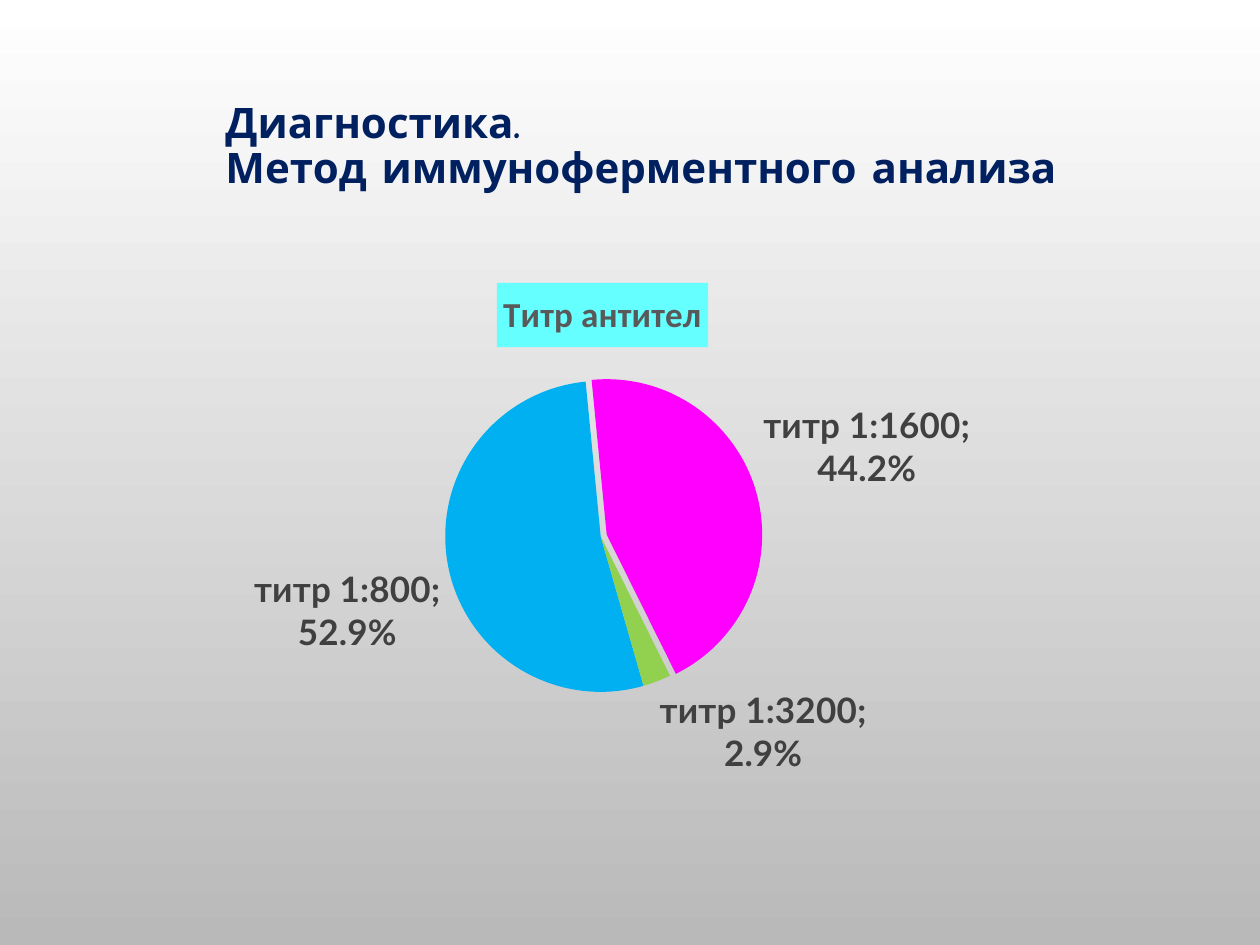
from lxml.etree import SubElement
from pptx import Presentation
from pptx.chart.data import CategoryChartData
from pptx.dml.color import RGBColor
from pptx.enum.chart import XL_CHART_TYPE as ChartType, XL_LABEL_POSITION as LabelPosition
from pptx.enum.text import MSO_ANCHOR as Anchor, PP_ALIGN as Align
from pptx.oxml import parse_xml
from pptx.oxml.ns import nsdecls, qn
from pptx.util import Cm, Pt

COLORS = {
    "top": "FFFFFF", "bottom": "B9B9B9", "heading": "002060",
    "chart_title": "595959", "chart_title_fill": "66FFFF", "label": "404040",
    "1:800": "00B0F0", "1:1600": "FF00FF", "1:3200": "92D050",
}
TITERS = {"1:800": 0.529, "1:1600": 0.442, "1:3200": 0.029}


def color(name):
    return RGBColor.from_string(COLORS[name])


def set_layout(parent, index, **values):
    """Place a chart part by fractions of the chart area."""
    for old in parent.findall(qn("c:layout")):
        parent.remove(old)
    layout = parse_xml(f"<c:layout {nsdecls('c')}><c:manualLayout/></c:layout>")
    for tag, value in values.items():
        SubElement(layout[0], qn(f"c:{tag}")).set("val", str(value))
    parent.insert(index, layout)


class SlideBuilder:
    heading_font = "Comic Neue"
    chart_font = "Calibri"
    label_font = "Lato"

    def __init__(self, presentation):
        self.slide = presentation.slides.add_slide(presentation.slide_layouts[5])

    def style(self, font, name, size, color_name):
        font.name, font.size, font.bold = name, Pt(size), True
        font.color.rgb = color(color_name)

    def background(self):
        fill = self.slide.background.fill
        fill.gradient()
        fill.gradient_angle = 270
        for stop, name, position in zip(fill.gradient_stops, ("top", "bottom"), (0, 1)):
            stop.color.rgb = color(name)
            stop.position = position

    def title(self, lines, left, top, width, height):
        shape = self.slide.shapes.title
        shape.left, shape.top, shape.width, shape.height = map(Cm, (left, top, width, height))
        frame = shape.text_frame
        frame.text = "\n".join(lines)
        frame.word_wrap = True
        frame.vertical_anchor = Anchor.TOP
        for paragraph in frame.paragraphs:
            paragraph.alignment = Align.LEFT
            paragraph.line_spacing = 0.9
            self.style(paragraph.font, self.heading_font, 24, "heading")

    def pie(self, heading, titers, exploded, left, top, width, height):
        data = CategoryChartData(number_format="0.0%")
        data.categories = [f"титр {titer}" for titer in titers]
        data.add_series(heading, titers.values())
        chart = self.slide.shapes.add_chart(
            ChartType.PIE, *map(Cm, (left, top, width, height)), data).chart
        chart.has_legend = False
        chart.font.name, chart.font.size = self.chart_font, Pt(10)

        # Chart title on a coloured box
        chart_title = chart.chart_title
        chart_title.text_frame.text = heading
        self.style(chart_title.text_frame.paragraphs[0].font,
                   self.chart_font, 20, "chart_title")
        chart_title.format.fill.solid()
        chart_title.format.fill.fore_color.rgb = color("chart_title_fill")
        title_element = chart.element.find(".//" + qn("c:title"))
        set_layout(title_element, 1, xMode="edge", yMode="edge", x=0.43, y=0.04)

        # Plot area and rotation
        plot_area = chart.element.find(".//" + qn("c:plotArea"))
        set_layout(plot_area, 0, layoutTarget="inner", xMode="edge", yMode="edge",
                   x=0.3, y=0.22, w=0.44, h=0.57)
        pie_element = plot_area.find(qn("c:pieChart"))
        for old in pie_element.findall(qn("c:firstSliceAng")):
            pie_element.remove(old)
        SubElement(pie_element, qn("c:firstSliceAng")).set("val", "164")

        # Slices
        plot = chart.plots[0]
        plot.vary_by_categories = True
        series = plot.series[0]
        for index, titer in enumerate(titers):
            fill = series.points[index].format.fill
            fill.solid()
            fill.fore_color.rgb = color(titer)
            if titer == exploded:
                explosion = parse_xml(f'<c:explosion {nsdecls("c")} val="4"/>')
                point = series._element.findall(qn("c:dPt"))[index]
                point.find(qn("c:spPr")).addprevious(explosion)

        # Labels
        labels = series.data_labels
        labels.show_category_name = labels.show_value = True
        labels.show_percentage = labels.show_legend_key = False
        labels.number_format, labels.number_format_is_linked = "0.0%", False
        labels.position = LabelPosition.OUTSIDE_END
        self.style(labels.font, self.label_font, 20, "label")
        separator = parse_xml(f"<c:separator {nsdecls('c')}>; </c:separator>")
        last_flag = (labels._element.find(qn("c:showBubbleSize")))
        if last_flag is None:
            last_flag = labels._element.find(qn("c:showPercent"))
        last_flag.addnext(separator)


def main():
    presentation = Presentation()
    presentation.slide_width, presentation.slide_height = Cm(25.4), Cm(19.05)
    builder = SlideBuilder(presentation)
    builder.background()
    builder.pie("Титр антител", TITERS, "1:1600", 0, 5.26, 23.29, 11)
    builder.title(["Диагностика.", "Метод иммуноферментного анализа"],
                  4.29, 1.93, 18.06, 3.33)
    presentation.save("out.pptx")


if __name__ == "__main__":
    main()
